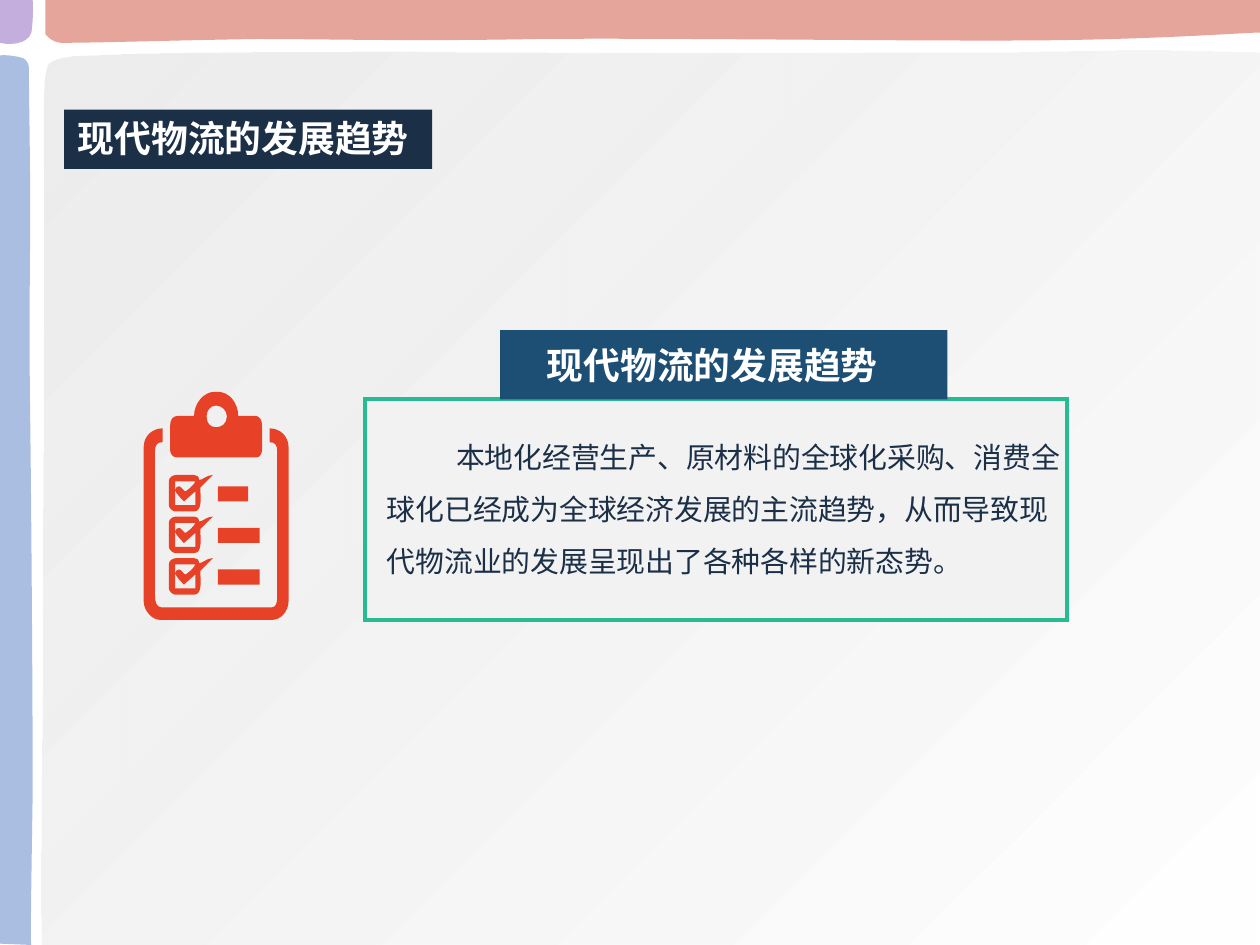
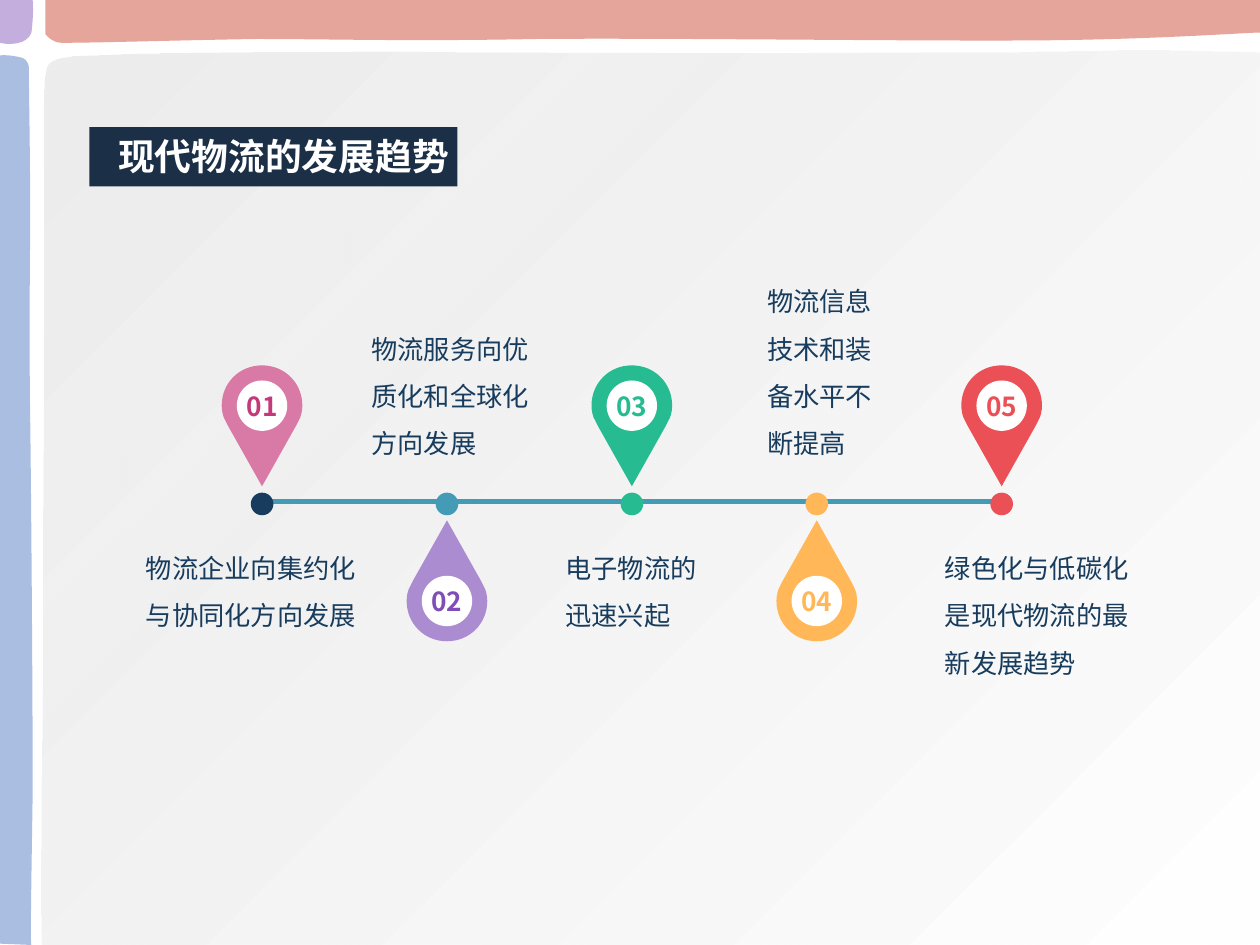
from lxml import etree
from pptx import Presentation
from pptx.dml.color import RGBColor
from pptx.enum import shapes, text
from pptx.oxml.ns import qn
from pptx.util import Inches, Pt

FONT = "Noto Sans CJK SC"
TITLE = "现代物流的发展趋势"
WHITE = RGBColor(0xFF, 0xFF, 0xFF)
PALE = RGBColor(0xF2, 0xF2, 0xF2)
GREY = RGBColor(0xE6, 0xE6, 0xE6)
INK = RGBColor(0x1B, 0x2F, 0x47)
NAVY = RGBColor(0x17, 0x3C, 0x5D)
BLUE = RGBColor(0x1D, 0x4E, 0x74)
TEAL = RGBColor(0x44, 0x9B, 0xB5)
GREEN = RGBColor(0x26, 0xBB, 0x91)
ORANGE = RGBColor(0xE7, 0x41, 0x27)
RED = RGBColor(0xEB, 0x50, 0x56)
AMBER = RGBColor(0xFF, 0xB7, 0x57)
PINK = RGBColor(0xD8, 0x7A, 0xA5)
MAGENTA = RGBColor(0xC4, 0x39, 0x79)
LILAC = RGBColor(0xAC, 0x8C, 0xD0)
VIOLET = RGBColor(0x7F, 0x4E, 0xB7)
SALMON = RGBColor(0xDA, 0x7F, 0x70)
SKY = RGBColor(0x85, 0xA3, 0xD5)

PANEL = [(10, 7.5), (10, 0.42), (8.86, 0.38, 8.55, 0.42, 7.6, 0.42),
         (6.66, 0.42, 5.5, 0.43, 4.33, 0.42), (3.16, 0.41, 1.23, 0.41, 0.57, 0.45),
         (0.36, 0.48, 0.36, 0.49, 0.35, 0.73), (0.34, 0.96, 0.35, 1.1, 0.35, 1.82),
         (0.35, 2.56, 0.34, 4.12, 0.34, 5.06), (0.34, 6.01, 0.32, 6.62, 0.33, 7.5),
         (5.17, 7.5, 10, 7.5, 10, 7.5)]
TOP_BAND = [(10, 0), (10, 0.26), (10.01, 0.25, 9.28, 0.31, 8.32, 0.32),
            (7.36, 0.33, 5.31, 0.3, 4.26, 0.31), (3.21, 0.33, 2.65, 0.31, 2.03, 0.31),
            (1.4, 0.32, 0.77, 0.34, 0.49, 0.34), (0.41, 0.34, 0.36, 0.27, 0.36, 0.27),
            (0.36, 0.27, 0.36, 0.14, 0.36, 0), (10, 0)]
SIDE_BAND = [(0, 7.49), (0.25, 7.5), (0.24, 7.51, 0.25, 6.98, 0.26, 6.28),
             (0.26, 5.58, 0.25, 4.07, 0.24, 3.3), (0.23, 2.54, 0.24, 2.12, 0.24, 1.67),
             (0.24, 1.21, 0.23, 0.75, 0.23, 0.54), (0.23, 0.48, 0.18, 0.46, 0.18, 0.46),
             (0.07, 0.43, 0, 0.44, 0, 0.44), (0, 7.49)]
CORNER = [(0, 0), (0.26, 0), (0.27, 0.12, 0.25, 0.26, 0.25, 0.26),
          (0.23, 0.31, 0.19, 0.33, 0.15, 0.34), (0.07, 0.36, 0, 0.34, 0, 0.34), (0, 0)]

BOARD = [(0.09, 0.47), (0.09, 0.42, 0.11, 0.4, 0.15, 0.4), (0.15, 0.29),
         (0.07, 0.29, 0, 0.35, 0, 0.44), (0, 1.66), (0, 1.74, 0.07, 1.81, 0.13, 1.81),
         (1.02, 1.81), (1.09, 1.81, 1.15, 1.74, 1.15, 1.66), (1.15, 0.44),
         (1.15, 0.35, 1.08, 0.29, 1, 0.29), (1, 0.4), (1.04, 0.4, 1.06, 0.42, 1.06, 0.47),
         (1.06, 1.63), (1.06, 1.67, 1.05, 1.71, 1.02, 1.71), (0.14, 1.71),
         (0.1, 1.71, 0.09, 1.66, 0.09, 1.62), (0.09, 0.47)]
CLIP = [(0.4, 0.19), (0.28, 0.19), (0.23, 0.19, 0.21, 0.22, 0.21, 0.27), (0.21, 0.46),
        (0.21, 0.49, 0.23, 0.52, 0.26, 0.52), (0.9, 0.52),
        (0.92, 0.52, 0.94, 0.49, 0.94, 0.46), (0.94, 0.27),
        (0.94, 0.22, 0.92, 0.19, 0.88, 0.19), (0.75, 0.19),
        (0.75, 0.09, 0.68, 0, 0.59, 0), (0.56, 0), (0.48, 0, 0.4, 0.09, 0.4, 0.19)]
CLIP_HOLE = [(0.5, 0.19), (0.5, 0.15, 0.53, 0.11, 0.57, 0.11), (0.58, 0.11),
             (0.62, 0.11, 0.66, 0.15, 0.66, 0.19), (0.66, 0.2),
             (0.66, 0.25, 0.62, 0.28, 0.58, 0.28), (0.57, 0.28),
             (0.53, 0.28, 0.5, 0.25, 0.5, 0.2), (0.5, 0.19)]
CHECK_BOX = [(0.44, 0.7), (0.44, 0.67, 0.42, 0.66, 0.4, 0.66), (0.26, 0.66),
             (0.23, 0.66, 0.2, 0.68, 0.2, 0.71), (0.2, 0.9),
             (0.2, 0.92, 0.23, 0.95, 0.25, 0.95), (0.4, 0.95),
             (0.47, 0.95, 0.45, 0.83, 0.45, 0.76), (0.55, 0.66),
             (0.5, 0.66, 0.47, 0.7, 0.44, 0.7)]
CHECK_HOLE = [(0.25, 0.71), (0.41, 0.71), (0.41, 0.73, 0.34, 0.79, 0.33, 0.79),
              (0.32, 0.79, 0.3, 0.75, 0.28, 0.75), (0.27, 0.75, 0.25, 0.76, 0.25, 0.78),
              (0.25, 0.8, 0.31, 0.86, 0.32, 0.87), (0.41, 0.79), (0.41, 0.9), (0.25, 0.9),
              (0.25, 0.71)]
PIN = [(0, -0.32), (0.18, -0.32, 0.32, -0.18, 0.32, 0), (0.32, 0.04, 0.31, 0.09, 0.29, 0.12),
       (0.27, 0.16), (0, 0.64), (-0.27, 0.16), (-0.29, 0.12),
       (-0.31, 0.09, -0.32, 0.04, -0.32, 0), (-0.32, -0.18, -0.18, -0.32, 0, -0.32)]

STOPS = [
    ("01", PINK, MAGENTA, NAVY, "物流企业向集约化与协同化方向发展", 1.06, 1.88, 0.86),
    ("02", LILAC, VIOLET, TEAL, "物流服务向优质化和全球化方向发展", 2.85, 1.5, 1.24),
    ("03", GREEN, GREEN, GREEN, "电子物流的迅速兴起", 4.39, 1.24, 0.86),
    ("04", AMBER, AMBER, AMBER, "物流信息技术和装备水平不断提高", 5.99, 1.23, 1.61),
    ("05", RED, RED, RED, "绿色化与低碳化是现代物流的最新发展趋势", 7.4, 1.75, 1.24),
]


def paint(shape, color):
    """Give a shape a plain fill without line or shadow."""
    shape.shadow.inherit = False
    shape.fill.solid()
    shape.fill.fore_color.rgb = color
    shape.line.fill.background()
    return shape


def bend(shape, parts):
    """Turn the segments given with control points into cubic curves."""
    nodes = list(shape.element.spPr.iter(qn("a:moveTo"), qn("a:lnTo")))
    for node, part in zip(nodes, parts):
        if len(part) == 2:
            continue
        curve = etree.Element(qn("a:cubicBezTo"))
        for x, y in zip(part[::2], part[1::2]):
            etree.SubElement(curve, qn("a:pt"), x=str(x - shape.left), y=str(y - shape.top))
        node.getparent().replace(node, curve)


def draw_outline(page, outlines, color, left=0, top=0):
    """Draw closed outlines of lines and curves as one filled freeform."""
    builder = None
    parts = []
    for outline in outlines:
        placed = [tuple(Inches(value + (top if index % 2 else left))
                        for index, value in enumerate(part)) for part in outline]
        ends = [part[-2:] for part in placed]
        if builder is None:
            builder = page.shapes.build_freeform(*ends[0])
        else:
            builder.move_to(*ends[0])
        builder.add_line_segments(ends[1:], close=True)
        parts += placed
    shape = builder.convert_to_shape()
    bend(shape, parts)
    return paint(shape, color)


def draw_shape(page, kind, color, left, top, width, height):
    """Draw a filled preset shape."""
    return paint(page.shapes.add_shape(kind, Inches(left), Inches(top), Inches(width),
                                       Inches(height)), color)


def fade(shape):
    """Make the first colour of a shape 70% opaque."""
    color = next(shape.element.spPr.iter(qn("a:srgbClr")))
    etree.SubElement(color, qn("a:alpha")).set("val", "70000")


def write(shape, words, size, color, bold=False, margins=(0.1, 0.05, 0.1, 0.05),
          anchor=text.MSO_ANCHOR.TOP, align=text.PP_ALIGN.LEFT, spacing=None):
    """Write one formatted paragraph into a shape and return it."""
    frame = shape.text_frame
    frame.word_wrap = True
    frame.vertical_anchor = anchor
    frame.margin_left, frame.margin_top, frame.margin_right, frame.margin_bottom = map(
        Inches, margins)
    frame.text = words
    para = frame.paragraphs[0]
    para.alignment = align
    para.line_spacing = spacing
    font = para.runs[0].font
    font.name, font.size, font.bold = FONT, Pt(size), bold
    font.color.rgb = color
    etree.SubElement(font._element, qn("a:ea")).set("typeface", FONT)
    return para


def add_text(page, left, top, width, height, *words, **style):
    """Add a text box and return its paragraph."""
    box = page.shapes.add_textbox(Inches(left), Inches(top), Inches(width), Inches(height))
    return write(box, *words, **style)


def add_page(deck, left, top, offset):
    """Add a page with the shared frame and a title on its band."""
    page = deck.slides.add_slide(deck.slide_layouts[6])
    panel = draw_outline(page, [PANEL], WHITE)
    panel.fill.gradient()
    panel.fill.gradient_angle = 315
    for stop, color, position in zip(panel.fill.gradient_stops, (GREY, WHITE), (0, 1)):
        stop.color.rgb = color
        stop.position = position
    fade(panel)
    for outline, color in ((TOP_BAND, SALMON), (SIDE_BAND, SKY), (CORNER, LILAC)):
        fade(draw_outline(page, [outline], color))
    band = draw_shape(page, shapes.MSO_SHAPE.ROUNDED_RECTANGLE, INK, left, top, 2.92, 0.47)
    band.adjustments[0] = 0
    add_text(page, left + offset, top, 2.9, 0.45, TITLE, 21, WHITE, bold=True)
    return page


def add_clipboard(page, left, top):
    """Draw a clipboard with three ticked rows."""
    outlines = [BOARD, CLIP, CLIP_HOLE]
    for row, width in enumerate((0.24, 0.33, 0.33)):
        drop = 0.33 * row
        for outline in (CHECK_BOX, CHECK_HOLE):
            outlines.append([tuple(value + drop * (index % 2)
                                   for index, value in enumerate(part)) for part in outline])
        bar = 0.75 + drop
        outlines.append([(0.59, bar), (0.59 + width, bar), (0.59 + width, bar + 0.12),
                         (0.59, bar + 0.12)])
    draw_outline(page, outlines, ORANGE, left, top)


def add_card(page, left, top, width, height):
    """Draw the framed summary with its heading tab."""
    card = draw_shape(page, shapes.MSO_SHAPE.RECTANGLE, PALE, left, top, width, height)
    card.line.color.rgb = GREEN
    card.line.width = Pt(2.25)
    etree.SubElement(card.element.spPr.find(qn("a:ln")), qn("a:miter")).set("lim", "800000")
    tab = draw_shape(page, shapes.MSO_SHAPE.RECTANGLE, BLUE, left + 1.07, top - 0.55, 3.55, 0.55)
    write(tab, TITLE, 21, WHITE, bold=True, margins=(0.37, 0.05, 0.1, 0.05),
          anchor=text.MSO_ANCHOR.MIDDLE)
    para = add_text(page, left + 0.17, top + 0.18, width - 0.2, 1.25,
                    "本地化经营生产、原材料的全球化采购、消费全球化已经成为全球经济发展的主流趋势，"
                    "从而导致现代物流业的发展呈现出了各种各样的新态势。",
                    16.5, INK, margins=(0, 0, 0, 0), spacing=1.5)
    para._p.get_or_add_pPr().set("indent", str(Inches(0.55)))


def add_pin(page, center, middle, direction, number, color, ink):
    """Draw a numbered pin whose tip points down (1) or up (-1)."""
    outline = [tuple(value * (direction if index % 2 else 1)
                     for index, value in enumerate(part)) for part in PIN]
    draw_outline(page, [outline], color, center, middle)
    disc = draw_shape(page, shapes.MSO_SHAPE.OVAL, WHITE, center - 0.2, middle - 0.2, 0.4, 0.4)
    write(disc, number, 15, ink, bold=True, margins=(0, 0, 0, 0),
          anchor=text.MSO_ANCHOR.MIDDLE, align=text.PP_ALIGN.CENTER)


def add_timeline(page, left, axis, width):
    """Draw the line of stops with alternating pins and labels."""
    line = page.shapes.add_connector(shapes.MSO_CONNECTOR.STRAIGHT, Inches(left), Inches(axis),
                                     Inches(left + width), Inches(axis))
    line.line.color.rgb = TEAL
    line.line.width = Pt(3)
    etree.SubElement(line.element.spPr, qn("a:effectLst"))
    for index, (number, color, ink, dot, label, x, span, height) in enumerate(STOPS):
        center = left + width * index / (len(STOPS) - 1)
        below = index % 2 == 0
        middle = axis - 0.76 if below else axis + 0.79
        add_pin(page, center, middle, 1 if below else -1, number, color, ink)
        draw_shape(page, shapes.MSO_SHAPE.OVAL, dot, center - 0.09, axis - 0.07, 0.18, 0.18)
        y = axis + 0.23 if below else axis - 0.29 - height
        anchor = text.MSO_ANCHOR.TOP if below else text.MSO_ANCHOR.BOTTOM
        add_text(page, x, y, span, height, label, 15, NAVY, anchor=anchor, spacing=1.5)


def main():
    """Build both pages and save the deck."""
    deck = Presentation()
    deck.slide_width, deck.slide_height = Inches(10), Inches(7.5)
    summary = add_page(deck, 0.51, 0.87, 0.01)
    add_clipboard(summary, 1.14, 3.11)
    add_card(summary, 2.9, 3.17, 5.57, 1.75)
    trends = add_page(deck, 0.71, 1.01, 0.13)
    add_timeline(trends, 2.08, 3.98, 5.87)
    deck.save("out.pptx")


if __name__ == "__main__":
    main()
